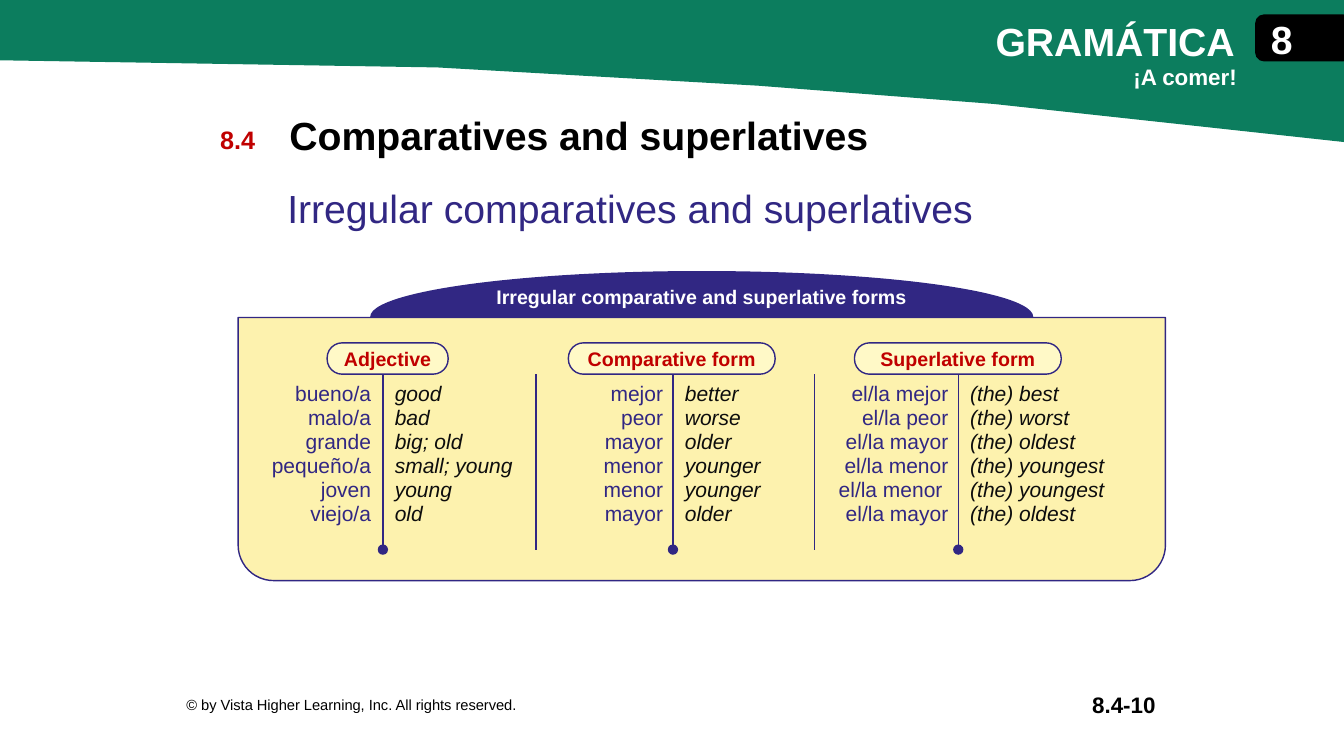
from dataclasses import dataclass
from typing import NamedTuple

from lxml import etree
from pptx import Presentation
from pptx.dml.color import RGBColor
from pptx.enum.shapes import MSO_SHAPE
from pptx.enum.text import MSO_ANCHOR, MSO_AUTO_SIZE, PP_ALIGN
from pptx.oxml.ns import qn
from pptx.util import Cm, Pt

LEFT, CENTER, RIGHT = PP_ALIGN.LEFT, PP_ALIGN.CENTER, PP_ALIGN.RIGHT
TOP, MIDDLE = MSO_ANCHOR.TOP, MSO_ANCHOR.MIDDLE
ELLIPSE, PILL = MSO_SHAPE.OVAL, MSO_SHAPE.ROUNDED_RECTANGLE
ROUND_TOP = MSO_SHAPE.ROUND_2_SAME_RECTANGLE
NO_FIT = MSO_AUTO_SIZE.NONE
TITLE_ONLY = 5
PLAIN_TABLE_STYLE = "{2D5ABB26-0587-4C30-8999-92F81FD0307C}"


@dataclass(frozen=True)
class Theme:
    font: str = "Arial"
    green: str = "0C7D5E"
    indigo: str = "312783"
    red: str = "C00000"
    cream: str = "FDF2AE"
    pale: str = "FFF9C7"
    ink: str = "0D0D0D"
    black: str = "000000"
    white: str = "FFFFFF"
    heading: float = 28
    number: float = 18
    subheading: float = 16
    body: float = 15
    label: float = 14
    small: float = 10.5


class Box(NamedTuple):
    """A rectangle in centimetres."""
    left: float
    top: float
    width: float
    height: float

    def inner(self, left, top, width, height):
        return Box(self.left + left, self.top + top, width, height)

    def lengths(self):
        return [Cm(value) for value in self]


class WordGroup(NamedTuple):
    heading: str
    pill_width: float
    pill_shift: float
    column_widths: tuple
    spanish: list
    english: list


THEME = Theme()
GROUPS = [
    WordGroup("Adjective", 3.05, 0.12, (3.2, 3.86),
              ["bueno/a", "malo/a", "grande", "pequeño/a", "joven", "viejo/a"],
              ["good", "bad", "big; old", "small; young", "young", "old"]),
    WordGroup("Comparative form", 5.21, -0.03, (3.45, 3.56),
              ["mejor", "peor", "mayor", "menor", "menor", "mayor"],
              ["better", "worse", "older", "younger", "younger", "older"]),
    WordGroup("Superlative form", 5.21, -0.01, (3.63, 5.51),
              ["el/la mejor", "el/la peor", "el/la mayor", "el/la menor",
               "el/la menor ", "el/la mayor"],
              ["(the) best", "(the) worst", "(the) oldest", "(the) youngest",
               "(the) youngest", "(the) oldest"]),
]


def rgb(color):
    return RGBColor.from_string(color)


def write_text(frame, lines, size, color, bold=False, italic=False,
               align=LEFT, space_after=0):
    frame.word_wrap = True
    for index, line in enumerate(lines):
        paragraph = frame.paragraphs[0] if index == 0 else frame.add_paragraph()
        paragraph.text = line
        paragraph.alignment = align
        paragraph.space_after = Pt(space_after)
        font = paragraph.font
        font.name, font.size = THEME.font, Pt(size)
        font.bold, font.italic = bold, italic
        font.color.rgb = rgb(color)


def set_margins(target, left, top, right, bottom):
    target.margin_left, target.margin_top = Cm(left), Cm(top)
    target.margin_right, target.margin_bottom = Cm(right), Cm(bottom)


def add_label(slide, box, text, size, color, anchor=TOP, margin=0.25, **style):
    frame = slide.shapes.add_textbox(*box.lengths()).text_frame
    frame.vertical_anchor = anchor
    set_margins(frame, margin, 0.13, margin, 0.13)
    write_text(frame, [text], size, color, **style)


def paint(shape, fill, line=None):
    shape.shadow.inherit = False
    shape.fill.solid()
    shape.fill.fore_color.rgb = rgb(fill)
    if line:
        shape.line.color.rgb = rgb(line)
        shape.line.width = Pt(1)
    else:
        shape.line.fill.background()


def add_figure(slide, kind, box, fill, line=None):
    shape = slide.shapes.add_shape(kind, *box.lengths())
    paint(shape, fill, line)
    return shape


def draw_header(slide, box):
    edge = [(box.width, 3.58), (25.04, 2.62), (19.1, 2.16), (11.02, 1.7),
            (0, 1.52), (0, 0), (box.width, 0)]
    points = [(Cm(box.left + x), Cm(box.top + y)) for x, y in edge]
    builder = slide.shapes.build_freeform(*points[0])
    builder.add_line_segments(points[1:], close=True)
    paint(builder.convert_to_shape(), THEME.green)

    add_label(slide, box.inner(24.84, 0.3, 9.02, 1.45), "GRAMÁTICA",
              THEME.heading, THEME.white, bold=True)
    add_label(slide, box.inner(26.9, 1.45, 4.52, 0.94), "¡A comer!",
              THEME.subheading, THEME.white, bold=True, align=RIGHT)
    tab = add_figure(slide, ROUND_TOP, box.inner(32.18, -0.15, 1.15, 2.21),
                     THEME.black, THEME.black)
    tab.rotation = 270
    tab.adjustments[0] = 0.178
    add_label(slide, box.inner(31.85, 0.46, 0.91, 1.02), "8", THEME.heading,
              THEME.white, anchor=MIDDLE, margin=0, bold=True, align=CENTER)


def draw_titles(slide, box):
    add_label(slide, box.inner(0, 0.33, 2.08, 1.02), "8.4", THEME.number,
              THEME.red, anchor=MIDDLE, bold=True, align=CENTER)
    title = slide.shapes.title
    title.left, title.top, title.width, title.height = box.inner(
        2.09, 0, 21.03, 1.45).lengths()
    title.text_frame.auto_size = NO_FIT
    title.text_frame.vertical_anchor = TOP
    write_text(title.text_frame, ["Comparatives and superlatives"],
               THEME.heading, THEME.black, bold=True)
    add_label(slide, box.inner(2.04, 1.85, 21.03, 1.45),
              "Irregular comparatives and superlatives",
              THEME.heading, THEME.indigo)


def add_border(cell, side):
    border = etree.Element(qn(f"a:{side}"), w=str(Pt(1)))
    fill = etree.SubElement(border, qn("a:solidFill"))
    etree.SubElement(fill, qn("a:srgbClr"), val=THEME.indigo)
    cell._tc.get_or_add_tcPr().insert(0, border)


def draw_word_table(slide, box):
    """Word pairs, each split by a rule with a pill above and a dot below."""
    columns = 2 * len(GROUPS)
    table = slide.shapes.add_table(2, columns, *box.lengths()).table
    table.first_row = table.horz_banding = False
    table._tbl.tblPr.find(qn("a:tableStyleId")).text = PLAIN_TABLE_STYLE
    heading_height = 1.07
    table.rows[0].height = Cm(heading_height)
    table.rows[1].height = Cm(box.height - heading_height)
    for cell in table.iter_cells():
        cell.fill.background()

    group_left = 0
    for index, group in enumerate(GROUPS):
        sides = [(group.spanish, THEME.indigo, RIGHT, "lnR"),
                 (group.english, THEME.ink, LEFT, "lnL")]
        for offset, (words, color, align, side) in enumerate(sides):
            column = 2 * index + offset
            table.columns[column].width = Cm(group.column_widths[offset])
            cell = table.cell(1, column)
            right = 0.3 if column in (0, columns - 1) else 0.25
            set_margins(cell, 0.3, 0.2, right, 0.13)
            write_text(cell.text_frame, words, THEME.body, color, align=align,
                       italic=align == LEFT, space_after=0.5)
            add_border(cell, side)

        rule = group_left + group.column_widths[0]
        pill_left = rule + group.pill_shift - group.pill_width / 2
        pill = add_figure(slide, PILL,
                          box.inner(pill_left, 0.28, group.pill_width, 0.79),
                          THEME.pale, THEME.indigo)
        pill.adjustments[0] = 0.48
        pill.text_frame.vertical_anchor = MIDDLE
        set_margins(pill.text_frame, 0.1, 0, 0.1, 0)
        write_text(pill.text_frame, [group.heading], THEME.label, THEME.red,
                   bold=True, align=CENTER)
        add_figure(slide, ELLIPSE, box.inner(rule - 0.13, 5.36, 0.26, 0.26),
                   THEME.indigo)
        group_left += sum(group.column_widths)


def draw_forms_panel(slide, box):
    dome = add_figure(slide, ELLIPSE, box.inner(3.33, -1.17, 16.71, 2.31),
                      THEME.indigo)
    dome.text_frame.vertical_anchor = MIDDLE
    set_margins(dome.text_frame, 0.25, 0, 0.25, 1.02)
    write_text(dome.text_frame, ["Irregular comparative and superlative forms"],
               THEME.label, THEME.white, bold=True, align=CENTER)
    panel = add_figure(slide, ROUND_TOP, box, THEME.cream, THEME.indigo)
    panel.rotation = 180
    panel.adjustments[0] = 0.135
    draw_word_table(slide, box.inner(0.45, 0.36, 23.21, 5.49))


def draw_footer(slide, box):
    add_label(slide, box.inner(17.27, 0, 7.65, box.height), "8.4-10",
              THEME.subheading, THEME.black, anchor=MIDDLE, bold=True, align=RIGHT)
    add_label(slide, box.inner(0, 0, 16.38, box.height),
              "© by Vista Higher Learning, Inc. All rights reserved.",
              THEME.small, THEME.black, anchor=MIDDLE)


def main():
    presentation = Presentation()
    presentation.slide_width, presentation.slide_height = Cm(33.87), Cm(19.05)
    slide = presentation.slides.add_slide(presentation.slide_layouts[TITLE_ONLY])
    draw_header(slide, Box(0, 0, 33.87, 3.58))
    draw_titles(slide, Box(4.95, 2.67, 23.12, 3.3))
    draw_forms_panel(slide, Box(6, 8, 23.37, 6.63))
    draw_footer(slide, Box(4.45, 17.32, 24.92, 0.89))
    presentation.save("out.pptx")


if __name__ == "__main__":
    main()
